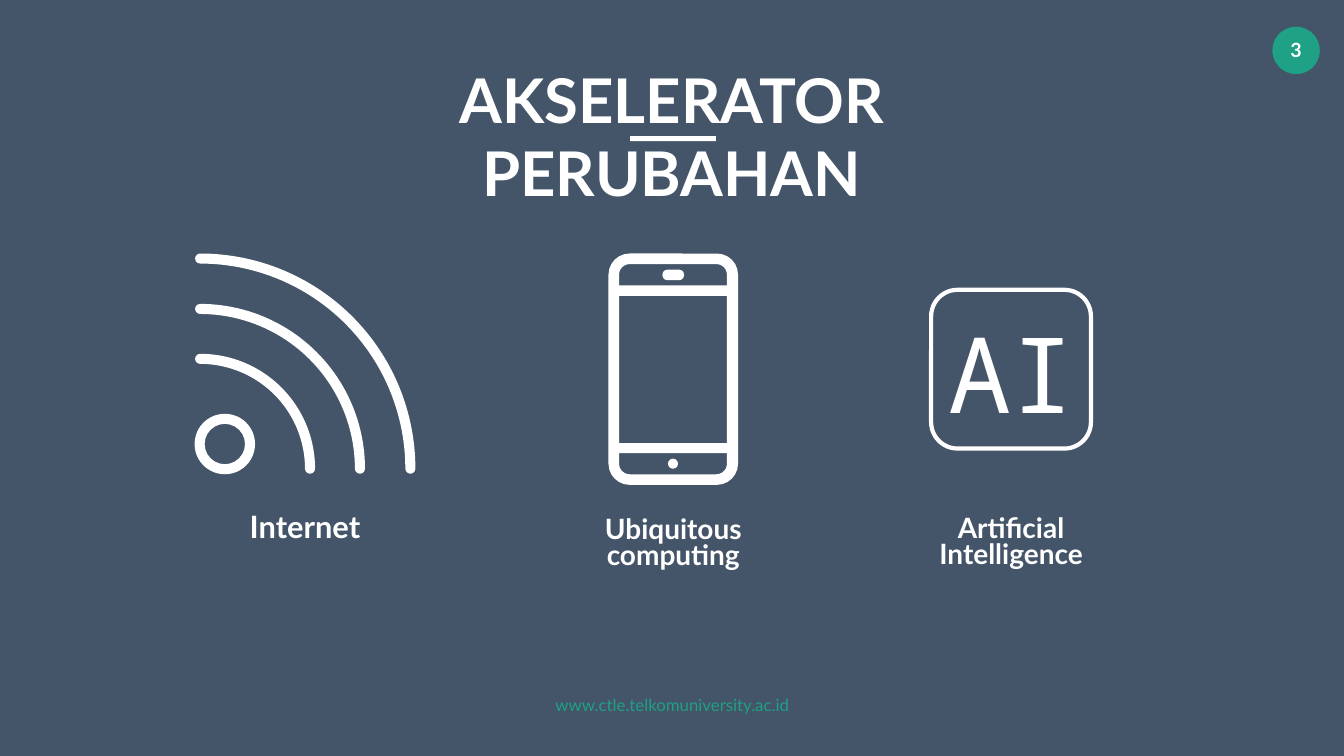
from math import cos, radians, sin

from lxml import etree
from pptx import Presentation
from pptx.dml.color import RGBColor
from pptx.enum.shapes import MSO_SHAPE as Shape
from pptx.enum.text import MSO_AUTO_SIZE as AutoSize, PP_ALIGN as Align
from pptx.oxml.ns import qn
from pptx.util import Inches, Pt

SLATE = RGBColor(0x44, 0x54, 0x69)
GREEN = RGBColor(0x1E, 0xA1, 0x85)
WHITE = RGBColor(0xFF, 0xFF, 0xFF)


def quarters(center_x, center_y, radius, *starts, sweep=90):
    """Quarter arcs as (x, y, radius, start, sweep); degrees run clockwise from the right."""
    return [(center_x, center_y, radius, start, sweep) for start in starts]


def rounded_box(left, top, right, bottom, top_radius, bottom_radius):
    """Four corner arcs of a box whose top and bottom corners have their own radius."""
    upper, lower = top + top_radius, bottom - bottom_radius
    return (quarters(left + top_radius, upper, top_radius, 180)
            + quarters(right - top_radius, upper, top_radius, 270)
            + quarters(right - bottom_radius, lower, bottom_radius, 0)
            + quarters(left + bottom_radius, lower, bottom_radius, 90))


deck = Presentation()
deck.slide_width, deck.slide_height = Inches(26.66), Inches(15)
page = deck.slides.add_slide(deck.slide_layouts[6])
page.background.fill.solid()
page.background.fill.fore_color.rgb = SLATE

# Page number badge and the rule between the title lines
for kind, place, color in [
    (Shape.OVAL, (25.24, 0.53, 0.94, 0.94), GREEN),
    (Shape.RECTANGLE, (12.5, 2.7, 1.7, 0.1), WHITE),
]:
    mark = page.shapes.add_shape(kind, *map(Inches, place))
    mark.shadow.inherit = False
    mark.fill.solid()
    mark.fill.fore_color.rgb = color
    mark.line.fill.background()

# Signal icon: three round-ended bands over a ring
signal_x, signal_y, half_band = 3.97, 9.3, 0.1
signal = []
for radius in (2.18, 3.17, 4.17):
    signal.append(quarters(signal_x, signal_y, radius + half_band, 270)
                  + quarters(signal_x + radius, signal_y, half_band, 0, 90)
                  + quarters(signal_x, signal_y, radius - half_band, 0, sweep=-90)
                  + quarters(signal_x, signal_y - radius, half_band, 90, 180))
for radius in (0.6, 0.4):
    signal.append(quarters(4.46, 8.81, radius, 0, 90, 180, 270))

# Phone icon: body, three openings, speaker and button
phone = [
    rounded_box(12.07, 5.03, 14.64, 9.62, 0.42, 0.42),
    rounded_box(12.28, 5.24, 14.42, 5.66, 0.21, 0),
    rounded_box(12.28, 5.87, 14.42, 8.79, 0, 0),
    rounded_box(12.28, 8.99, 14.42, 9.41, 0, 0.21),
    rounded_box(13.14, 5.35, 13.57, 5.56, 0.1, 0.1),
    quarters(13.35, 9.2, 0.1, 0, 90, 180, 270),
]

for outlines in (phone, signal):
    builder = None
    for outline in outlines:
        points = [(Inches(x + radius * cos(radians(start))),
                   Inches(y + radius * sin(radians(start))))
                  for x, y, radius, start, sweep in outline]
        if builder is None:
            builder = page.shapes.build_freeform(*points[0], scale=1.0)
        else:
            builder.move_to(*points[0])
        builder.add_line_segments(points[1:], close=True)
    icon = builder.convert_to_shape()
    icon.shadow.inherit = False
    icon.fill.solid()
    icon.fill.fore_color.rgb = WHITE
    icon.line.fill.background()

    # Each drawn point is the start of one arc
    steps = icon.element.xpath(".//a:path/*[not(self::a:close)]")
    arcs = [arc for outline in outlines for arc in outline]
    for step, (x, y, radius, start, sweep) in zip(steps, arcs):
        if radius:
            size = str(Inches(radius))
            step.addnext(etree.Element(qn("a:arcTo"), wR=size, hR=size,
                                       stAng=str(start * 60000), swAng=str(sweep * 60000)))

# Frame of the AI icon
border = page.shapes.add_shape(
    Shape.ROUNDED_RECTANGLE, Inches(18.47), Inches(5.75), Inches(3.17), Inches(3.15))
border.shadow.inherit = False
border.fill.background()
border.line.color.rgb = WHITE
border.line.width = Pt(6)

# Text, place, side and top inset, size, font, bold, colour, wrap, is a caption
for text, place, insets, size, font, bold, color, wrap, caption in [
    ("www.ctle.telkomuniversity.ac.id", (8.52, 13.68, 9.63, 0.61), (0.2, 0.1),
     24, "Lato", False, GREEN, True, False),
    ("3", (25.27, 0.66, 0.88, 0.67), (0.2, 0.1), 28, "Lato", True, WHITE, False, False),
    ("AKSELERATOR PERUBAHAN", (6.23, 1.17, 14.19, 1.58), (0.1, 0.05),
     88, "Lato", True, WHITE, True, False),
    ("AI", (18.47, 6.07, 3.17, 2.63), (0.1, 0.05),
     150, "Noto Sans Mono", False, WHITE, True, False),
    ("Internet", (4.48, 10.28, 3.14, 0.52), (0, 0), 44, "Lato", True, WHITE, True, True),
    ("Ubiquitous computing", (11.48, 10.3, 3.75, 1.06), (0, 0),
     40, "Lato", True, WHITE, True, True),
    ("Artificial Intelligence", (18.18, 10.27, 3.75, 1.06), (0, 0),
     40, "Lato", True, WHITE, True, True),
]:
    frame = page.shapes.add_textbox(*map(Inches, place)).text_frame
    frame.word_wrap = wrap
    frame.auto_size = AutoSize.SHAPE_TO_FIT_TEXT
    frame.margin_left = frame.margin_right = Inches(insets[0])
    frame.margin_top = frame.margin_bottom = Inches(insets[1])
    para = frame.paragraphs[0]
    para.text = text
    para.alignment = Align.CENTER
    para.font.name = font
    para.font.size = Pt(size)
    para.font.bold = bold
    para.font.color.rgb = color
    if caption:
        para.line_spacing = Pt(37.3)
        para.space_after = Pt(32)

deck.save("out.pptx")
